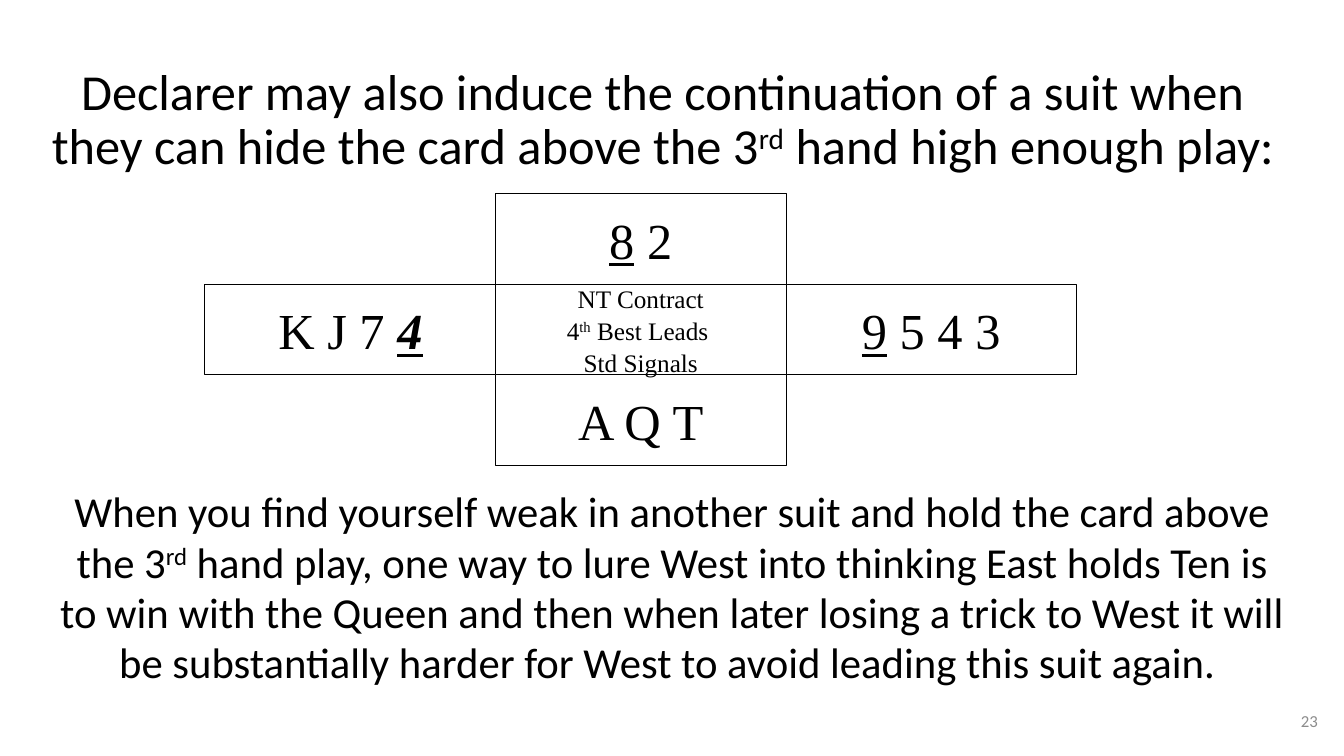
"""Build the bridge slide about hiding the card above third hand's play."""
from dataclasses import dataclass
from typing import NamedTuple

from pptx import Presentation
from pptx import util as u
from pptx.dml.color import RGBColor
from pptx.enum import shapes, text

EMU_PER_PX = 9144
BLACK, WHITE, GREY = "000000", "FFFFFF", "8C8C8C"
SANS, SERIF = "Calibri", "Times New Roman"
CELL_WIDTH, CELL_HEIGHT = 289, 90
COLUMN_STEP, GRID_LEFT, GRID_TOP = 288, 203, 192


class Piece(NamedTuple):
    """A stretch of text with its emphasis."""
    words: str
    underline: bool = False
    strong: bool = False
    superscript: bool = False


class Box(NamedTuple):
    """A position and size in px."""
    left: int
    top: int
    width: int
    height: int


@dataclass(frozen=True)
class Style:
    """Looks shared by all paragraphs of a text frame."""
    font: str
    size: float
    color: str = BLACK
    align: text.PP_ALIGN = text.PP_ALIGN.CENTER
    anchor: text.MSO_ANCHOR = text.MSO_ANCHOR.MIDDLE
    spacing: float = 1.0
    inset: int = 10


@dataclass(frozen=True)
class Block:
    """A free text with its place and style."""
    box: Box
    lines: list[list[Piece]]
    style: Style


@dataclass(frozen=True)
class Cell:
    """A rectangle of the card diagram, placed by column and row."""
    column: int
    row: int
    lines: list[list[Piece]]
    style: Style


CARDS = Style(SERIF, 36)
NOTES = Style(SERIF, 18, spacing=1.05)
RD = Piece("rd", superscript=True)

BLOCKS = [
    Block(Box(38, 30, 1239, 180), [[
        Piece("Declarer may also induce the continuation of a suit when "
              "they can hide the card above the 3"),
        RD,
        Piece(" hand high enough play: "),
    ]], Style(SANS, 36, spacing=0.9)),
    Block(Box(47, 479, 1239, 217), [[
        Piece("When you find yourself weak in another suit and hold the card above the 3"),
        RD,
        Piece(" hand play, one way to lure West into thinking East holds Ten is "
              "to win with the Queen and then when later losing a trick to West it will "
              "be substantially harder for West to avoid leading this suit again. "),
    ]], Style(SANS, 30.5, anchor=text.MSO_ANCHOR.TOP, spacing=0.98, inset=8)),
    Block(Box(1017, 695, 300, 40), [[Piece("23")]],
          Style(SANS, 12, GREY, text.PP_ALIGN.RIGHT)),
]

CELLS = [
    Cell(1, 0, [[Piece("8", underline=True), Piece(" 2")]], CARDS),
    Cell(0, 1, [[Piece("K J 7 "), Piece("4", underline=True, strong=True)]], CARDS),
    Cell(2, 1, [[Piece("9", underline=True), Piece(" 5 4 3")]], CARDS),
    Cell(1, 2, [[Piece("A Q T")]], CARDS),
    Cell(1, 1, [
        [Piece("NT Contract")],
        [Piece("4"), Piece("th", superscript=True), Piece(" Best Leads ")],
        [Piece("Std Signals")],
    ], NOTES),
]


def px(length: int) -> u.Emu:
    """Turn px into EMU."""
    return u.Emu(length * EMU_PER_PX)


def rgb(color: str) -> RGBColor:
    """Turn a hex string into a colour."""
    return RGBColor.from_string(color)


def write(frame, lines: list[list[Piece]], style: Style) -> None:
    """Fill a text frame with styled lines."""
    frame.word_wrap = True
    frame.vertical_anchor = style.anchor
    frame.margin_left = frame.margin_right = px(style.inset)
    frame.margin_top = frame.margin_bottom = px(5)
    frame.text = "\n".join("" for _ in lines)
    for paragraph, pieces in zip(frame.paragraphs, lines):
        paragraph.alignment = style.align
        paragraph.line_spacing = style.spacing
        for piece in pieces:
            run = paragraph.add_run()
            run.text = piece.words
            run.font.name = style.font
            run.font.size = u.Pt(style.size)
            run.font.color.rgb = rgb(style.color)
            run.font.underline = piece.underline
            run.font.bold = run.font.italic = piece.strong
            if piece.superscript:
                run._r.get_or_add_rPr().set("baseline", "30000")


def add_block(slide, block: Block) -> None:
    """Draw a free text."""
    shape = slide.shapes.add_textbox(*map(px, block.box))
    write(shape.text_frame, block.lines, block.style)


def add_cell(slide, cell: Cell) -> None:
    """Draw one rectangle of the card diagram."""
    box = Box(GRID_LEFT + cell.column * COLUMN_STEP,
              GRID_TOP + cell.row * CELL_HEIGHT, CELL_WIDTH, CELL_HEIGHT)
    shape = slide.shapes.add_shape(shapes.MSO_SHAPE.RECTANGLE, *map(px, box))
    shape.shadow.inherit = False
    shape.fill.solid()
    shape.fill.fore_color.rgb = rgb(WHITE)
    shape.line.color.rgb = rgb(BLACK)
    shape.line.width = u.Pt(0.75)
    write(shape.text_frame, cell.lines, cell.style)


def main() -> None:
    """Build and save the slide."""
    presentation = Presentation()
    presentation.slide_width, presentation.slide_height = px(1333), px(750)
    slide = presentation.slides.add_slide(presentation.slide_layouts[6])
    for cell in CELLS:
        add_cell(slide, cell)
    for block in BLOCKS:
        add_block(slide, block)
    presentation.save("out.pptx")


if __name__ == "__main__":
    main()
